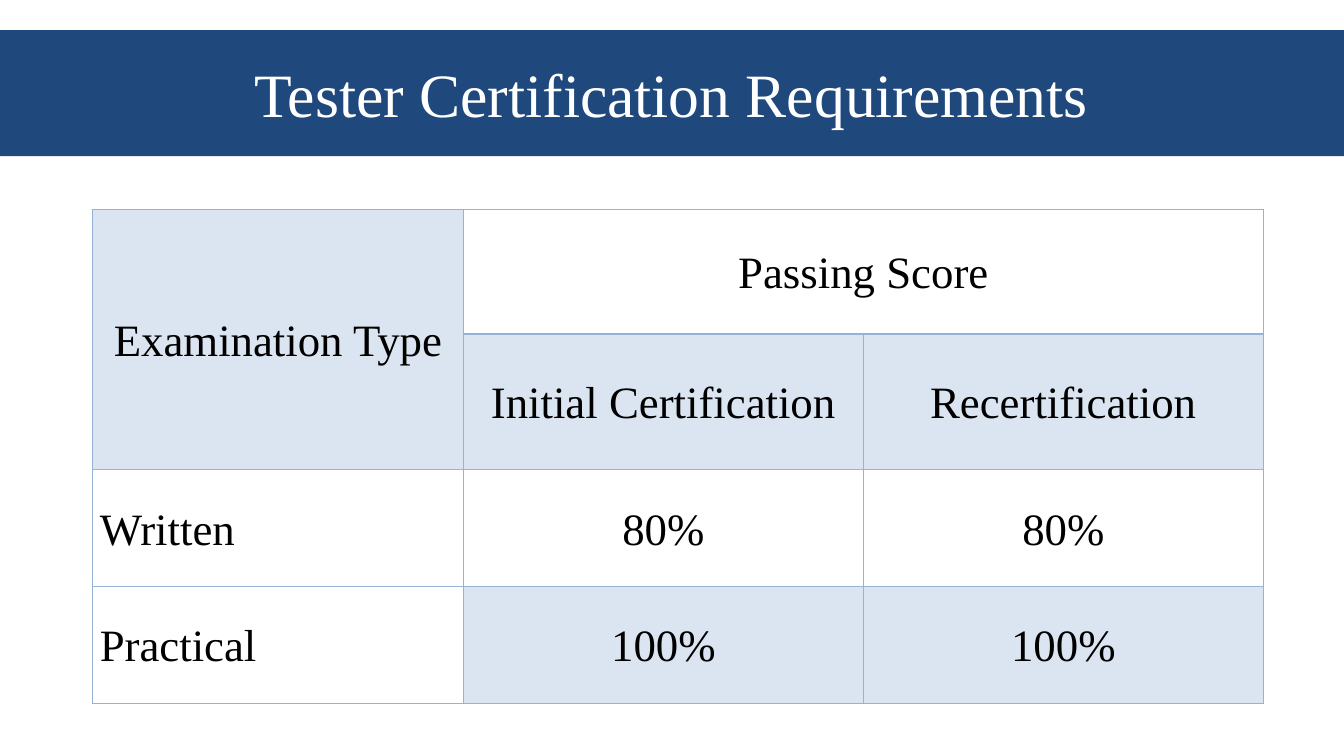
from lxml.etree import SubElement
from pptx import Presentation
from pptx.dml.color import RGBColor
from pptx.enum.shapes import MSO_SHAPE
from pptx.enum.text import MSO_ANCHOR, PP_ALIGN
from pptx.oxml.ns import qn
from pptx.util import Inches, Pt

NAVY = RGBColor(0x1F, 0x49, 0x7D)
PALE_BLUE = RGBColor(0xDB, 0xE5, 0xF1)
BORDER_BLUE = RGBColor(0x95, 0xB3, 0xD7)
WHITE = RGBColor(0xFF, 0xFF, 0xFF)
BLACK = RGBColor(0, 0, 0)
FONT = "Times New Roman"

COLUMN_WIDTHS = [3.68, 3.97, 3.97]
ROW_HEIGHTS = [1.23, 1.35, 1.16, 1.16]
REQUIREMENTS = [
    ["Examination Type", "Passing Score", ""],
    ["", "Initial Certification", "Recertification"],
    ["Written", "80%", "80%"],
    ["Practical", "100%", "100%"],
]
SHADED_CELLS = {(0, 0), (1, 1), (1, 2), (3, 1), (3, 2)}
LEFT_ALIGNED_CELLS = {(2, 0), (3, 0)}
THICK_EDGES = {(0, 1, "B"), (0, 2, "B"), (1, 1, "T"), (1, 2, "T")}


def write_text(para, text, size, color, alignment):
    para.text = text
    para.alignment = alignment
    para.font.name = FONT
    para.font.size = Pt(size)
    para.font.color.rgb = color


def add_title_band(page, left, top, width, height):
    band = page.shapes.add_shape(MSO_SHAPE.RECTANGLE, left, top, width, height)
    band.shadow.inherit = False
    band.fill.solid()
    band.fill.fore_color.rgb = NAVY
    band.line.fill.background()
    band.text_frame.word_wrap = True
    band.text_frame.vertical_anchor = MSO_ANCHOR.MIDDLE
    write_text(band.text_frame.paragraphs[0], "Tester Certification Requirements",
               44, WHITE, PP_ALIGN.CENTER)


def set_borders(cell, row, column):
    properties = cell._tc.get_or_add_tcPr()
    for side in "LRTB":
        width = 1.5 if (row, column, side) in THICK_EDGES else 1
        line = SubElement(properties, qn(f"a:ln{side}"), w=str(Pt(width)))
        fill = SubElement(line, qn("a:solidFill"))
        SubElement(fill, qn("a:srgbClr"), val=str(BORDER_BLUE))


def style_cell(cell, row, column):
    set_borders(cell, row, column)
    if (row, column) in SHADED_CELLS:
        cell.fill.solid()
        cell.fill.fore_color.rgb = PALE_BLUE
    else:
        cell.fill.background()
    cell.margin_left = cell.margin_right = Inches(0.07)
    cell.margin_top = cell.margin_bottom = 0
    cell.vertical_anchor = MSO_ANCHOR.MIDDLE
    para = cell.text_frame.paragraphs[0]
    para.line_spacing = 1.07
    alignment = PP_ALIGN.LEFT if (row, column) in LEFT_ALIGNED_CELLS else PP_ALIGN.CENTER
    write_text(para, REQUIREMENTS[row][column], 32, BLACK, alignment)


def add_requirements_table(page, left, top, width, height):
    table = page.shapes.add_table(len(ROW_HEIGHTS), len(COLUMN_WIDTHS),
                                  left, top, width, height).table
    table.first_row = table.horz_banding = False
    for column, share in zip(table.columns, COLUMN_WIDTHS):
        column.width = int(width * share / sum(COLUMN_WIDTHS))
    for row, share in zip(table.rows, ROW_HEIGHTS):
        row.height = int(height * share / sum(ROW_HEIGHTS))
    for row in range(len(ROW_HEIGHTS)):
        for column in range(len(COLUMN_WIDTHS)):
            style_cell(table.cell(row, column), row, column)
    table.cell(0, 0).merge(table.cell(1, 0))
    table.cell(0, 1).merge(table.cell(0, 2))


def main():
    deck = Presentation()
    deck.slide_width = Inches(13.33)
    deck.slide_height = Inches(7.5)
    page = deck.slides.add_slide(deck.slide_layouts[6])
    add_title_band(page, 0, Inches(0.3), deck.slide_width, Inches(1.25))
    add_requirements_table(page, Inches(0.92), Inches(2.08), Inches(11.61), Inches(4.9))
    deck.save("out.pptx")


if __name__ == "__main__":
    main()
